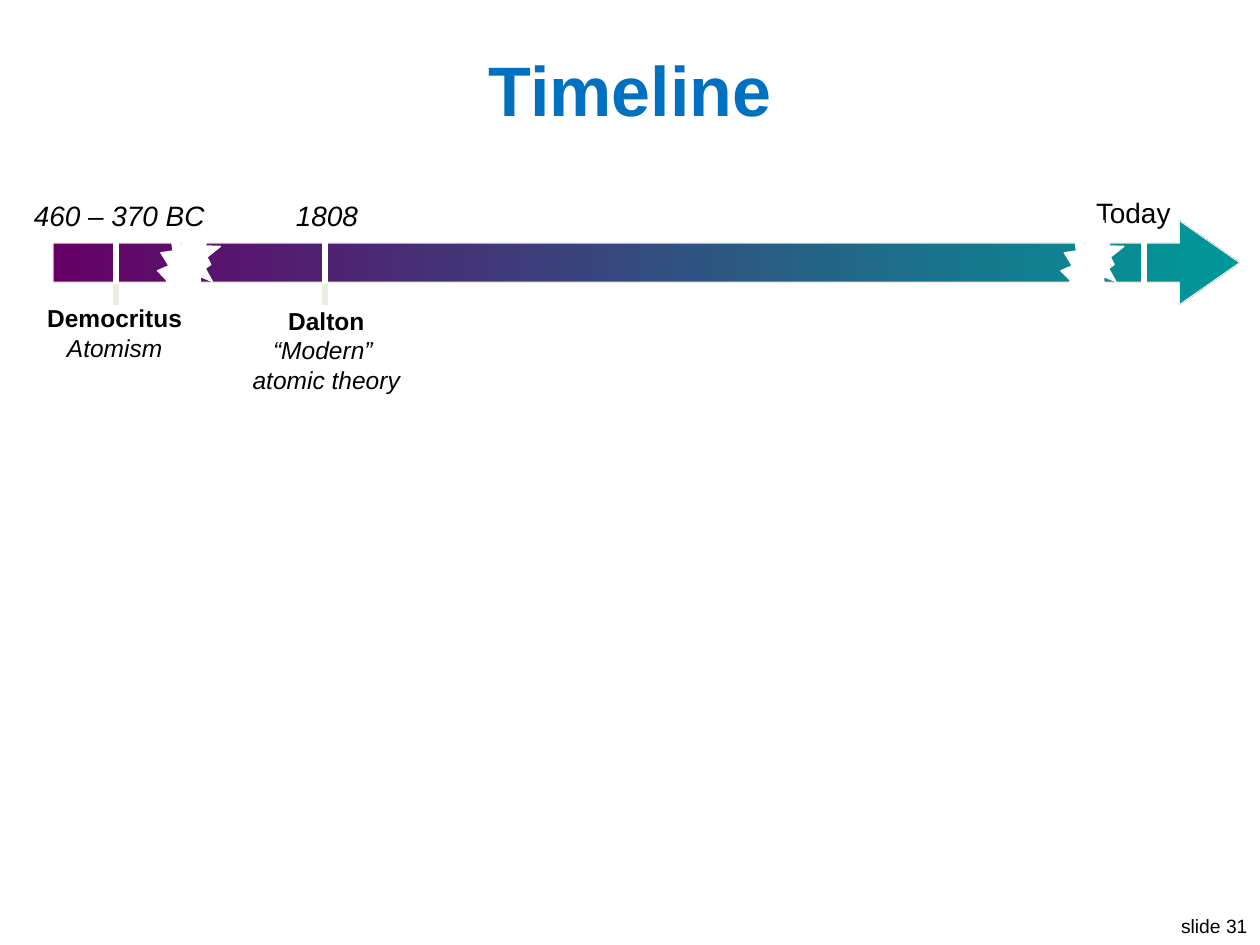
"""Build a timeline slide of atomic theory."""
from pptx import Presentation
from pptx import util as u
from pptx.dml.color import RGBColor
from pptx.enum import shapes, text
from pptx.oxml.ns import qn
from lxml import etree

SHAPE = shapes.MSO_SHAPE
ALIGN = text.PP_ALIGN


def colour(value):
    return RGBColor.from_string(value)


def write(para, words, size=16, bold=False, italic=False, ink="000000", align=ALIGN.LEFT):
    para.alignment = align
    span = para.add_run()
    span.text = words
    font = span.font
    font.name, font.size = "Arial", u.Pt(size)
    font.bold, font.italic = bold, italic
    font.color.rgb = colour(ink)


class TimelinePage:
    white, cream, blue = "FFFFFF", "EEECE1", "0070C0"
    purple, teal = "660066", "009999"
    bar_top, bar_bottom, tick_end = 1.92, 2.25, 2.42
    arrow_top, arrow_height = 1.75, 0.67

    def __init__(self, deck):
        self.page = deck.slides.add_slide(deck.slide_layouts[5])

    def title(self, words):
        box = self.page.shapes.title
        box.left, box.top = u.Inches(0.2), u.Inches(0.3)
        box.width, box.height = u.Inches(9.6), u.Inches(0.8)
        frame = box.text_frame
        frame.vertical_anchor = text.MSO_ANCHOR.MIDDLE
        write(frame.paragraphs[0], words, size=40, bold=True, ink=self.blue, align=ALIGN.CENTER)

    def label(self, left, top, width, height, *lines, **style):
        box = self.page.shapes.add_textbox(*map(u.Inches, (left, top, width, height)))
        frame = box.text_frame
        frame.word_wrap = False
        frame.auto_size = text.MSO_AUTO_SIZE.SHAPE_TO_FIT_TEXT
        for index, words in enumerate(lines):
            para = frame.add_paragraph() if index else frame.paragraphs[0]
            line_style = style or {"size": 14, "bold": index == 0,
                                   "italic": index > 0, "align": ALIGN.CENTER}
            write(para, words, **line_style)

    def outline(self, kind, left, width, edge):
        shape = self.page.shapes.add_shape(
            kind, *map(u.Inches, (left, self.arrow_top, width, self.arrow_height)))
        shape.shadow.inherit = False
        shape.line.color.rgb = colour(edge)
        shape.line.width = u.Pt(0.75)
        return shape

    def arrow(self, left, width):
        shape = self.outline(SHAPE.RIGHT_ARROW, left, width, self.cream)
        shape.adjustments[0], shape.adjustments[1] = 0.464, 0.717
        shape.fill.gradient()
        shape.fill.gradient_angle = 0
        for stop, value in zip(shape.fill.gradient_stops, (self.purple, self.teal)):
            stop.color.rgb = colour(value)

    def gap(self, left):
        shape = self.outline(SHAPE.EXPLOSION2, left, 0.5, self.white)
        shape.fill.solid()
        shape.fill.fore_color.rgb = colour(self.white)

    def line(self, x, top, bottom, ink):
        line = self.page.shapes.add_connector(
            shapes.MSO_CONNECTOR.STRAIGHT, *map(u.Inches, (x, top, x, bottom)))
        line.line.color.rgb = colour(ink)
        line.line.width = u.Pt(3)
        etree.SubElement(line._element.spPr, qn("a:effectLst"))

    def tick(self, x, stem=True):
        self.line(x, self.bar_top, self.bar_bottom, self.white)
        if stem:
            self.line(x, self.bar_bottom, self.tick_end, self.cream)


def main():
    deck = Presentation()
    deck.slide_width, deck.slide_height = u.Inches(10), u.Inches(7.5)
    timeline = TimelinePage(deck)
    timeline.title("Timeline")
    timeline.label(9.25, 7.21, 0.75, 0.29, "slide 31", size=11, align=ALIGN.RIGHT)
    timeline.arrow(0.42, 9.42)
    timeline.label(8.6, 1.5, 0.82, 0.37, "Today", size=16)
    for x in (0.92, 2.58):
        timeline.tick(x)
    timeline.tick(9.08, stem=False)
    for left in (1.25, 8.42):
        timeline.gap(left)
    timeline.label(0.17, 1.53, 1.56, 0.37, "460 – 370 BC", italic=True)
    timeline.label(2.25, 1.53, 0.69, 0.37, "1808", italic=True)
    timeline.label(0.27, 2.36, 1.28, 0.57, "Democritus", "Atomism")
    timeline.label(1.9, 2.38, 1.38, 0.81, "Dalton", "“Modern” ", "atomic theory")
    deck.save("out.pptx")


if __name__ == "__main__":
    main()
